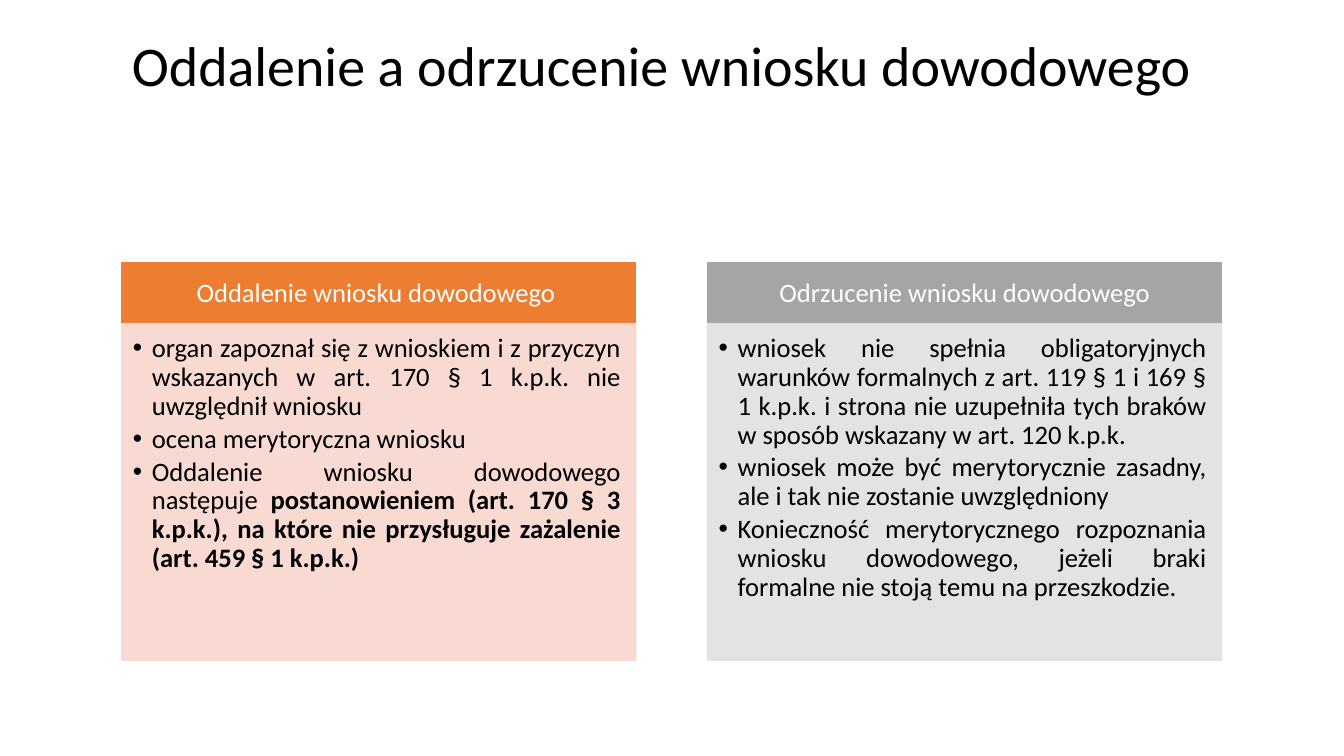
from lxml import etree
from pptx import Presentation
from pptx.dml.color import RGBColor
from pptx.enum.shapes import MSO_SHAPE
from pptx.enum.text import MSO_ANCHOR, PP_ALIGN
from pptx.oxml.ns import qn
from pptx.util import Pt

RECT = MSO_SHAPE.RECTANGLE
TOP, MIDDLE = MSO_ANCHOR.TOP, MSO_ANCHOR.MIDDLE
LEFT, CENTER, JUSTIFY = PP_ALIGN.LEFT, PP_ALIGN.CENTER, PP_ALIGN.JUSTIFY

BLACK = RGBColor(0x00, 0x00, 0x00)
WHITE = RGBColor(0xFF, 0xFF, 0xFF)
ORANGE = RGBColor(0xED, 0x7D, 0x31)
PEACH = RGBColor(0xF8, 0xD7, 0xCE)
GRAY = RGBColor(0xA5, 0xA5, 0xA5)
SILVER = RGBColor(0xE1, 0xE1, 0xE1)

TITLE = "Oddalenie a odrzucenie wniosku dowodowego"
PANELS = [
    (ORANGE, PEACH, "Oddalenie wniosku dowodowego ", [
        ["organ zapoznał się z wnioskiem i z przyczyn wskazanych "
         "w art. 170 § 1 k.p.k. nie uwzględnił wniosku"],
        ["ocena merytoryczna wniosku "],
        ["Oddalenie wniosku dowodowego następuje ",
         "postanowieniem (art. 170 § 3 k.p.k.), na które nie "
         "przysługuje zażalenie (art. 459 § 1 k.p.k.)"],
    ]),
    (GRAY, SILVER, "Odrzucenie wniosku dowodowego", [
        ["wniosek nie spełnia obligatoryjnych warunków formalnych "
         "z art. 119 § 1 i 169 § 1 k.p.k. i strona nie uzupełniła "
         "tych braków w sposób wskazany w art. 120 k.p.k."],
        ["wniosek może być merytorycznie zasadny, ale i tak nie "
         "zostanie uwzględniony "],
        ["Konieczność merytorycznego rozpoznania wniosku dowodowego, "
         "jeżeli braki formalne nie stoją temu na przeszkodzie."],
    ]),
]


def write(frame, paras, size=19, color=BLACK, align=LEFT, anchor=MIDDLE,
          inset=(7.2, 3.6, 7.2, 3.6), bullet=False):
    """Fill a text frame; the second run of a paragraph is bold."""
    frame.word_wrap = True
    frame.vertical_anchor = anchor
    (frame.margin_left, frame.margin_top,
     frame.margin_right, frame.margin_bottom) = map(Pt, inset)
    for i, runs in enumerate(paras):
        para = frame.add_paragraph() if i else frame.paragraphs[0]
        para.alignment = align
        para.line_spacing = 0.9
        for j, text in enumerate(runs):
            run = para.add_run()
            run.text = text
            font = run.font
            font.name, font.size, font.bold = "Calibri", Pt(size), j == 1
            font.color.rgb = color
        if bullet:
            para.level = 1
            para.space_after = Pt(3)
            props = para._p.get_or_add_pPr()
            props.set("marL", str(Pt(13.5)))
            props.set("indent", str(Pt(-13.5)))
            etree.SubElement(props, qn("a:buFont"), typeface="Arial")
            etree.SubElement(props, qn("a:buChar"), char="•")


def block(slide, box, color, alpha=100):
    """Add a plain rectangle and return its text frame."""
    shape = slide.shapes.add_shape(RECT, *map(Pt, box))
    shape.shadow.inherit = False
    shape.line.width = Pt(1)
    for fill in (shape.fill, shape.line.fill):
        fill.solid()
        fill.fore_color.rgb = color
    if alpha < 100:
        for node in shape._element.spPr.iter(qn("a:srgbClr")):
            etree.SubElement(node, qn("a:alpha"), val=str(alpha * 1000))
    return shape.text_frame


def head(slide, box):
    """Place the slide title in the box."""
    title = slide.shapes.title
    title.left, title.top, title.width, title.height = map(Pt, box)
    write(title.text_frame, [[TITLE]], size=40)


def panel(slide, box, dark, light, name, items):
    """Place a header bar with its bullet list below."""
    x, y, w, h = box
    bar = 43.2
    write(block(slide, (x, y, w, bar), dark), [[name]], color=WHITE,
          align=CENTER, inset=(10.8, 5.8, 10.8, 5.8))
    body = block(slide, (x, y + bar, w, h - bar), light, alpha=90)
    write(body, items, align=JUSTIFY, anchor=TOP,
          inset=(8, 8, 10.8, 12), bullet=True)


def main():
    """Build the slide and save it."""
    deck = Presentation()
    deck.slide_width, deck.slide_height = Pt(960), Pt(540)
    slide = deck.slides.add_slide(deck.slide_layouts[5])
    left, width, gap = 87, 367.2, 51.2
    head(slide, (left, 6, 786, 86))
    for i, parts in enumerate(PANELS):
        panel(slide, (left + i * (width + gap), 188, width, 283.6), *parts)
    deck.save("out.pptx")


if __name__ == "__main__":
    main()
